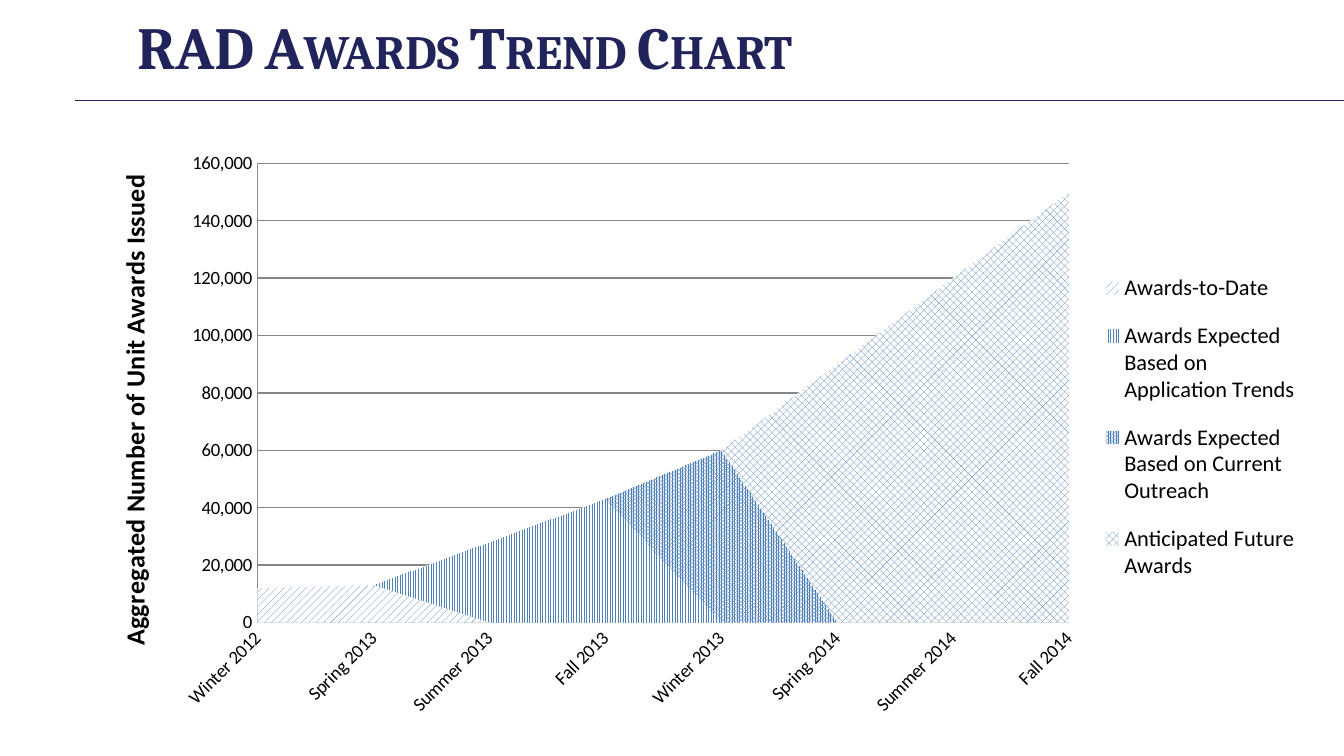
from lxml.etree import SubElement
from pptx import Presentation
from pptx.chart.data import CategoryChartData
from pptx.dml.color import RGBColor
from pptx.enum.chart import XL_CHART_TYPE, XL_LEGEND_POSITION, XL_TICK_MARK
from pptx.enum.dml import MSO_PATTERN
from pptx.enum.shapes import MSO_CONNECTOR
from pptx.enum.text import MSO_ANCHOR, PP_ALIGN
from pptx.oxml import parse_xml
from pptx.oxml.ns import nsdecls, qn
from pptx.util import Inches, Pt

# Content
TITLE = "RAD Awards Trend Chart"
AXIS_TITLE = "Aggregated Number of Unit Awards Issued"
SEASONS = ["Winter 2012", "Spring 2013", "Summer 2013", "Fall 2013",
           "Winter 2013", "Spring 2014", "Summer 2014", "Fall 2014"]
# name, index of first season, values, pattern
AWARDS = [
    ("Awards-to-Date", 0, [12000, 13000], MSO_PATTERN.WIDE_UPWARD_DIAGONAL),
    ("Awards Expected Based on Application Trends", 1, [13000, 28000, 43000],
     MSO_PATTERN.NARROW_VERTICAL),
    ("Awards Expected Based on Current Outreach", 3, [43000, 60000],
     MSO_PATTERN.PERCENT_90),
    ("Anticipated Future Awards", 4, [60000, 90000, 120000, 150000],
     MSO_PATTERN.LARGE_CHECKER_BOARD),
]
NAVY, BLUE, WHITE, BLACK, GRAY = "21245A", "4F81BD", "FFFFFF", "000000", "868686"


def color(hex_text):
    return RGBColor.from_string(hex_text)


def format_font(font, size, name="Calibri", fill=BLACK, bold=False):
    font.size, font.name, font.bold = Pt(size), name, bold
    font.color.rgb = color(fill)


def write(frame, text, small_caps=False, **font_format):
    para = frame.paragraphs[0]
    span = para.add_run()
    span.text = text
    format_font(span.font, **font_format)
    if small_caps:
        span.font._element.set("cap", "small")
    return para


def place(element, index, inner=False, **fractions):
    """Set a manual layout, in fractions of the chart, on a chart part."""
    for old in element.findall(qn("c:layout")):
        element.remove(old)
    layout = parse_xml(f"<c:layout {nsdecls('c')}><c:manualLayout/></c:layout>")
    settings = {"layoutTarget": "inner"} if inner else {}
    settings |= {"xMode": "edge", "yMode": "edge"} | fractions
    for tag, value in settings.items():
        SubElement(layout[0], qn(f"c:{tag}")).set("val", str(value))
    element.insert(index, layout)


def rotate(body, degrees):
    body.set("rot", str(degrees * 60000))
    body.set("vert", "horz")


# Widescreen page, 16 to 9
deck = Presentation()
deck.slide_width, deck.slide_height = Inches(10), Inches(10 * 9 / 16)
page = deck.slides.add_slide(deck.slide_layouts[5])

# Rule under the title
rule = page.shapes.add_connector(MSO_CONNECTOR.STRAIGHT, Inches(0.56), Inches(0.75),
                                 Inches(10), Inches(0.75))
rule.line.color.rgb = color(NAVY)
rule.line.width = Pt(0.75)
SubElement(rule._element.spPr, qn("a:effectLst"))

# Title
title = page.shapes.title
title.left, title.top = Inches(0.92), Inches(0.12)
title.width, title.height = Inches(8.89), Inches(0.44)
title.text_frame.vertical_anchor = MSO_ANCHOR.MIDDLE
heading = write(title.text_frame, TITLE, small_caps=True, size=32,
                name="Cambria", fill=NAVY, bold=True)
heading.alignment = PP_ALIGN.LEFT

# Area chart
data = CategoryChartData(number_format="#,##0")
data.categories = SEASONS
for name, start, values, _ in AWARDS:
    after = len(SEASONS) - start - len(values)
    data.add_series(name, [None] * start + values + [None] * after)
chart = page.shapes.add_chart(XL_CHART_TYPE.AREA, Inches(0.83), Inches(0.69),
                              Inches(9.05), Inches(4.78), data).chart
chart.has_title = False
format_font(chart.font, 10)
chart._chartSpace.chart.find(qn("c:dispBlanksAs")).set("val", "zero")
place(chart._chartSpace.chart.plotArea, 0, inner=True, x=0.12, y=0.11, w=0.667, h=0.715)
for series, (_, _, _, pattern) in zip(chart.plots[0].series, AWARDS):
    fill = series.format.fill
    fill.patterned()
    fill.pattern = pattern
    fill.fore_color.rgb, fill.back_color.rgb = color(BLUE), color(WHITE)
    series.format.line.fill.background()

# Axes
for axis in (chart.category_axis, chart.value_axis):
    axis.major_tick_mark = axis.minor_tick_mark = XL_TICK_MARK.NONE
    axis.format.line.color.rgb = color(GRAY)
    format_font(axis.tick_labels.font, 10)
rotate(chart.category_axis._element.find(qn("c:txPr")).find(qn("a:bodyPr")), -45)
chart.category_axis.has_major_gridlines = False
units = chart.value_axis
units.minimum_scale, units.maximum_scale, units.major_unit = 0, 160000, 20000
units.has_major_gridlines = True
units.major_gridlines.format.line.color.rgb = color(GRAY)
units.tick_labels.number_format = "#,##0"
units.tick_labels.number_format_is_linked = False
frame = units.axis_title.text_frame
write(frame, AXIS_TITLE, size=14, bold=True)
rotate(frame._txBody.find(qn("a:bodyPr")), -90)
place(units.axis_title._element, 1, x=0, y=0.12)

# Legend
chart.has_legend = True
chart.legend.position = XL_LEGEND_POSITION.RIGHT
chart.legend.include_in_layout = False
format_font(chart.legend.font, 12)
place(chart.legend._element, 1, x=0.81, y=0.25, w=0.17, h=0.54)

deck.save("out.pptx")
